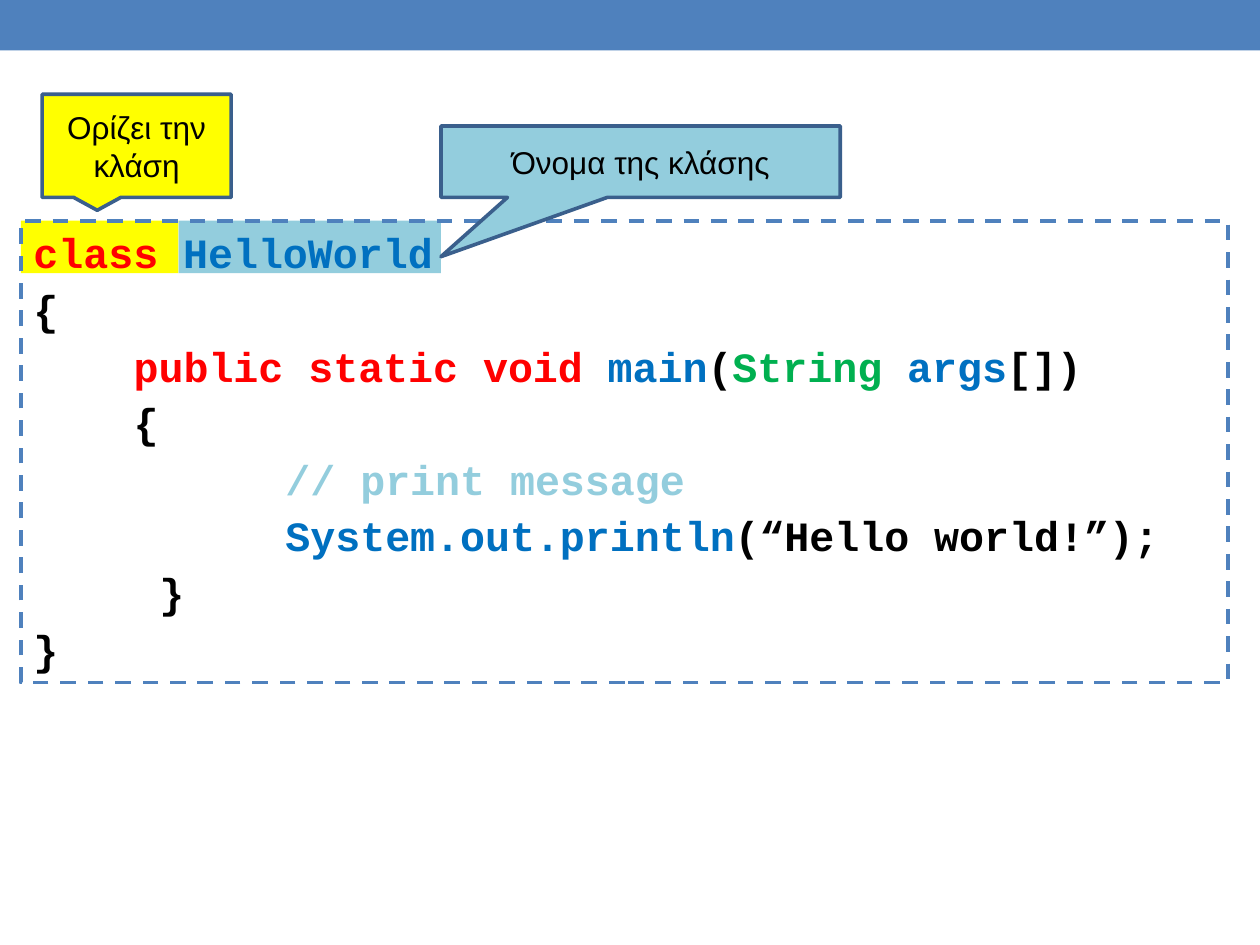
from pptx import Presentation
from pptx.dml.color import RGBColor
from pptx.enum.dml import MSO_LINE
from pptx.enum.shapes import MSO_SHAPE
from pptx.enum.text import MSO_ANCHOR, MSO_AUTO_SIZE, PP_ALIGN
from pptx.oxml.ns import qn
from pptx.util import Cm, Pt

COLORS = {
    "accent": "4F81BD", "outline": "3A5F8C", "yellow": "FFFF00",
    "sky": "93CDDD", "keyword": "FF0000", "name": "0070C0",
    "type": "00B050", "plain": "000000",
}

# Each code line: indent in cm, then (text, colour) pieces
CODE = [
    (0, [("class ", "keyword"), ("HelloWorld", "name")]),
    (0, [("{", "plain")]),
    (2.02, [("public static void ", "keyword"), ("main", "name"),
            ("(", "plain"), ("String ", "type"), ("args", "name"),
            ("[])", "plain")]),
    (2.02, [("{", "plain")]),
    (5.08, [("// print message", "sky")]),
    (5.08, [("System.out.println", "name"),
            ("(“Hello world!”);", "plain")]),
    (2.54, [("}", "plain")]),
    (0, [("}", "plain")]),
]
FIRST_GAP, LINE_GAP = Pt(6.3), Pt(3.8)


def color(key):
    return RGBColor.from_string(COLORS[key])


def style_font(font, name, size, key, bold=False):
    font.name, font.size, font.bold = name, Pt(size), bold
    font.color.rgb = color(key)


def add_block(slide, kind, box, fill):
    block = slide.shapes.add_shape(kind, *map(Cm, box))
    block.shadow.inherit = False
    block.fill.solid()
    block.fill.fore_color.rgb = color(fill)
    block.line.fill.background()
    return block


def add_callout(slide, box, fill, text, tip=None):
    callout = add_block(slide, MSO_SHAPE.RECTANGULAR_CALLOUT, box, fill)
    callout.line.color.rgb = color("outline")
    callout.line.width = Pt(2.08)
    if tip:
        callout.adjustments[0], callout.adjustments[1] = tip
    frame = callout.text_frame
    frame.text = text
    frame.word_wrap = True
    frame.vertical_anchor = MSO_ANCHOR.MIDDLE
    paragraph = frame.paragraphs[0]
    paragraph.alignment = PP_ALIGN.CENTER
    style_font(paragraph.runs[0].font, "Arial", 18, "plain")


def add_code_line(paragraph, indent, pieces, gap):
    paragraph.space_before = gap
    properties = paragraph._p.get_or_add_pPr()
    properties.set("marL", str(Cm(indent)))
    properties.set("indent", "0")
    properties.append(properties.makeelement(qn("a:buNone"), {}))
    for text, key in pieces:
        run = paragraph.add_run()
        run.text = text
        style_font(run.font, "Courier New", 23.8, key, bold=True)


def fill_code(slide, code, box):
    code.left, code.top, code.width, code.height = map(Cm, box)
    code.line.color.rgb = color("accent")
    code.line.width = Pt(2.25)
    code.line.dash_style = MSO_LINE.DASH
    frame = code.text_frame
    frame.word_wrap = True
    frame.auto_size = MSO_AUTO_SIZE.NONE
    frame.vertical_anchor = MSO_ANCHOR.TOP
    for number, (indent, pieces) in enumerate(CODE):
        paragraph = frame.add_paragraph() if number else frame.paragraphs[0]
        add_code_line(paragraph, indent, pieces,
                      LINE_GAP if number else FIRST_GAP)
    # Bring the code in front of its highlights
    slide.shapes._spTree.append(code._element)


def main():
    deck = Presentation()
    deck.slide_width, deck.slide_height = Cm(25.4), Cm(19.05)
    slide = deck.slides.add_slide(deck.slide_layouts[1])
    title, code = slide.placeholders
    title._element.getparent().remove(title._element)

    # Top band and highlights of the class declaration
    add_block(slide, MSO_SHAPE.RECTANGLE, (0, 0, 25.4, 1.02), "accent")
    add_block(slide, MSO_SHAPE.RECTANGLE, (0.42, 4.45, 3.18, 1.06), "yellow")
    add_block(slide, MSO_SHAPE.RECTANGLE, (3.6, 4.45, 5.29, 1.06), "sky")

    # Code listing
    fill_code(slide, code, (0.42, 4.45, 24.34, 9.31))

    # Callouts
    add_callout(slide, (0.85, 1.9, 3.81, 2.08), "yellow", "Ορίζει την κλάση")
    add_callout(slide, (8.89, 2.54, 8.05, 1.44), "sky", "Όνομα της κλάσης",
                tip=(-0.5, 1.33))
    deck.save("out.pptx")


if __name__ == "__main__":
    main()
